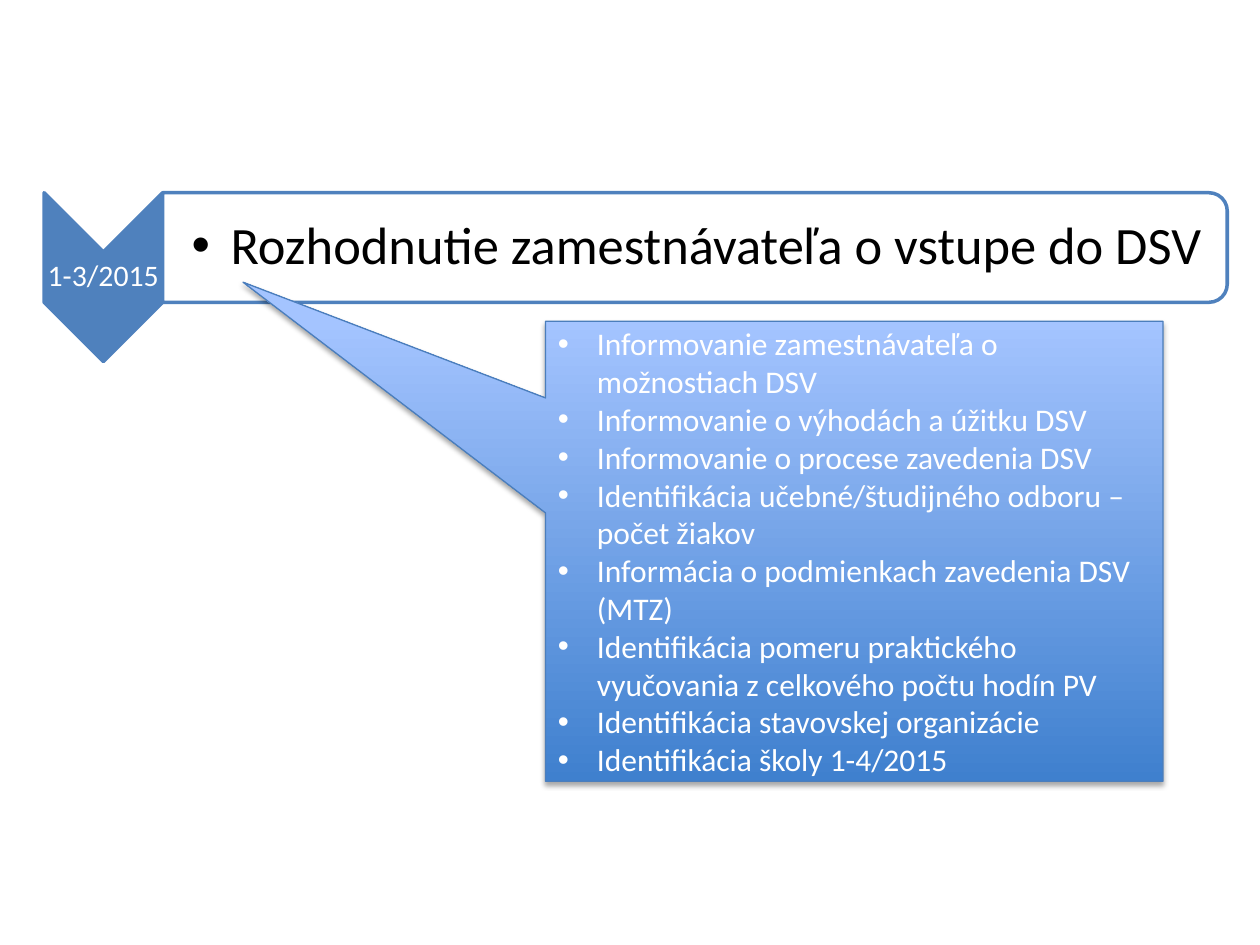
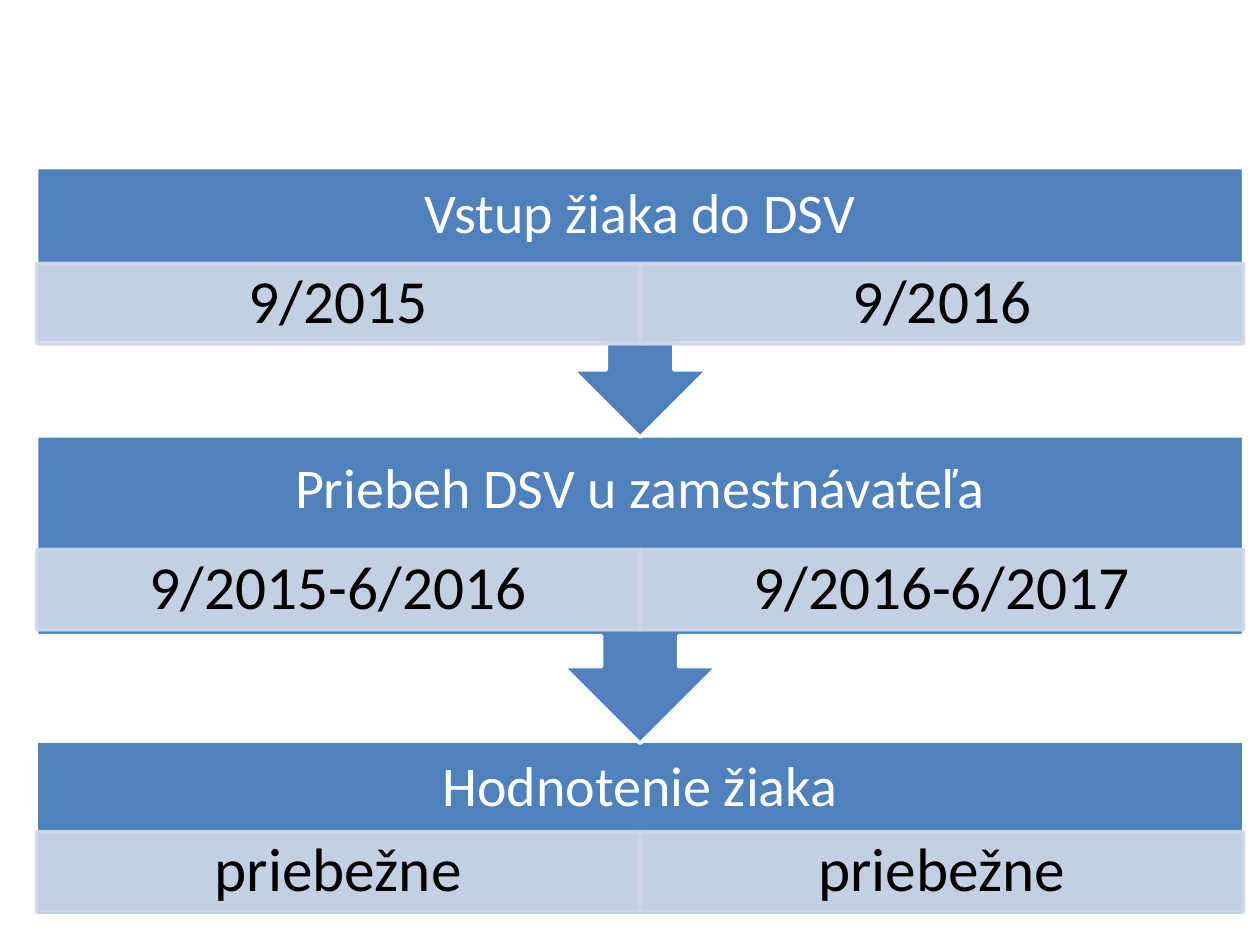
from lxml.etree import SubElement
from pptx import Presentation
from pptx.dml.color import RGBColor
from pptx.enum.shapes import MSO_SHAPE
from pptx.enum.text import MSO_ANCHOR, PP_ALIGN
from pptx.oxml.ns import qn
from pptx.util import Inches, Pt

FONT = "Calibri"
COLORS = {
    "blue": "4F81BD",
    "pale": "D0D8E8",
    "white": "FFFFFF",
    "black": "000000",
    "note_low": "3F80CE",
    "note_high": "A4C4FF",
    "note_line": "4B7EBC",
}

PERIOD = "1-3/2015"
DECISION = "Rozhodnutie zamestnávateľa o vstupe do DSV"
TASKS = [
    "Informovanie zamestnávateľa o možnostiach DSV",
    "Informovanie o výhodách a úžitku DSV",
    "Informovanie o procese zavedenia DSV",
    "Identifikácia učebné/študijného odboru – počet žiakov",
    "Informácia o podmienkach zavedenia DSV (MTZ)",
    "Identifikácia pomeru praktického vyučovania z celkového počtu hodín PV",
    "Identifikácia stavovskej organizácie",
    "Identifikácia školy 1-4/2015",
]

# heading, dates, top, height, heading height, top of the dates
STAGES = [
    ("Vstup žiaka do DSV", ["9/2015", "9/2016"], 1.33, 2.14, 0.75, 2.09),
    ("Priebeh DSV u zamestnávateľa", ["9/2015-6/2016", "9/2016-6/2017"],
     3.46, 2.44, 0.86, 4.36),
    ("Hodnotenie žiaka", ["priebežne", "priebežne"], 5.88, 1.39, 0.75, 6.6),
]
STAGE_LEFT, STAGE_WIDTH, DATE_HEIGHT = 0.29, 9.58, 0.64
BULLET_INDENT = 0.31


def rgb(name):
    return RGBColor.from_string(COLORS[name])


def add_part(page, kind, box, fill=None, line="white", weight=2, rotation=0, opacity=100):
    shape = page.shapes.add_shape(kind, *map(Inches, box))
    shape.shadow.inherit = False
    shape.rotation = rotation
    if fill:
        shape.fill.solid()
        shape.fill.fore_color.rgb = rgb(fill)
    shape.line.color.rgb = rgb(line)
    shape.line.width = Pt(weight)
    if opacity < 100:
        for color in list(shape._element.spPr.iter(qn("a:srgbClr"))):
            SubElement(color, qn("a:alpha"), val=str(opacity * 1000))
    return shape


def add_bullet(para):
    properties = para._p.get_or_add_pPr()
    properties.set("marL", str(Inches(BULLET_INDENT)))
    properties.set("indent", str(-Inches(BULLET_INDENT)))
    SubElement(properties, qn("a:buFont"), typeface="Arial")
    SubElement(properties, qn("a:buChar"), char="•")


def write(shape, lines, size, color="white", align=PP_ALIGN.CENTER, spacing=0.9,
          insets=(0.1, 0.05, 0.1, 0.05), bullets=False):
    frame = shape.text_frame
    frame.word_wrap = True
    frame.vertical_anchor = MSO_ANCHOR.MIDDLE
    (frame.margin_left, frame.margin_top,
     frame.margin_right, frame.margin_bottom) = map(Inches, insets)
    for index, text in enumerate(lines):
        para = frame.paragraphs[0] if index == 0 else frame.add_paragraph()
        para.alignment = align
        para.line_spacing = spacing
        if bullets:
            add_bullet(para)
        span = para.add_run()
        span.text = text
        span.font.name = FONT
        span.font.size = Pt(size)
        span.font.color.rgb = rgb(color)


def add_text(page, box, text, size, **style):
    write(page.shapes.add_textbox(*map(Inches, box)), [text], size, **style)


def add_task_note(page):
    note = add_part(page, MSO_SHAPE.RECTANGULAR_CALLOUT, (4.33, 2.55, 4.9, 3.65),
                    line="note_line", weight=0.75)
    note.adjustments[0] = -0.99
    note.adjustments[1] = -0.585
    note.fill.gradient()
    note.fill.gradient_angle = 90
    for stop, name in zip(note.fill.gradient_stops, ("note_low", "note_high")):
        stop.color.rgb = rgb(name)
    effects = note._element.spPr.find(qn("a:effectLst"))
    shadow = SubElement(effects, qn("a:outerShdw"), blurRad=str(Pt(3.1)),
                        dist=str(Pt(1.8)), dir="5400000", rotWithShape="0")
    color = SubElement(shadow, qn("a:srgbClr"), val=COLORS["black"])
    SubElement(color, qn("a:alpha"), val="35000")
    write(note, TASKS, 18, align=PP_ALIGN.LEFT, spacing=1.0, bullets=True)


def build_decision(page):
    add_part(page, MSO_SHAPE.CHEVRON, (0.15, 1.73, 1.34, 0.94), "blue", "blue", rotation=90)
    add_text(page, (0.35, 2, 0.94, 0.4), PERIOD, 17, insets=(0.01,) * 4)
    add_part(page, MSO_SHAPE.ROUND_2_SAME_RECTANGLE, (5.08, -2.26, 0.87, 8.45),
             "white", "blue", rotation=90)
    add_text(page, (1.29, 1.57, 8.41, 0.79), DECISION, 30, color="black",
             align=PP_ALIGN.LEFT, insets=(0.23, 0.02, 0.02, 0.02), bullets=True)
    add_task_note(page)


def build_stages(page):
    """Stack from the bottom up, so that each arrow tip lies over the next stage."""
    for heading, dates, top, height, heading_height, dates_top in reversed(STAGES):
        last = heading == STAGES[-1][0]
        add_part(page, MSO_SHAPE.RECTANGLE if last else MSO_SHAPE.UP_ARROW_CALLOUT,
                 (STAGE_LEFT, top, STAGE_WIDTH, height), "blue", rotation=0 if last else 180)
        add_text(page, (STAGE_LEFT, top, STAGE_WIDTH, heading_height), heading, 32)
        width = STAGE_WIDTH / len(dates)
        for column, date in enumerate(dates):
            cell = add_part(page, MSO_SHAPE.RECTANGLE,
                            (STAGE_LEFT + column * width, dates_top, width, DATE_HEIGHT),
                            "pale", "pale", opacity=90)
            write(cell, [date], 35, color="black", insets=(0.27, 0.05, 0.27, 0.05))


def main():
    deck = Presentation()
    deck.slide_width, deck.slide_height = Inches(10), Inches(7.5)
    blank = deck.slide_layouts[6]
    for build in (build_decision, build_stages):
        build(deck.slides.add_slide(blank))
    deck.save("out.pptx")


if __name__ == "__main__":
    main()
